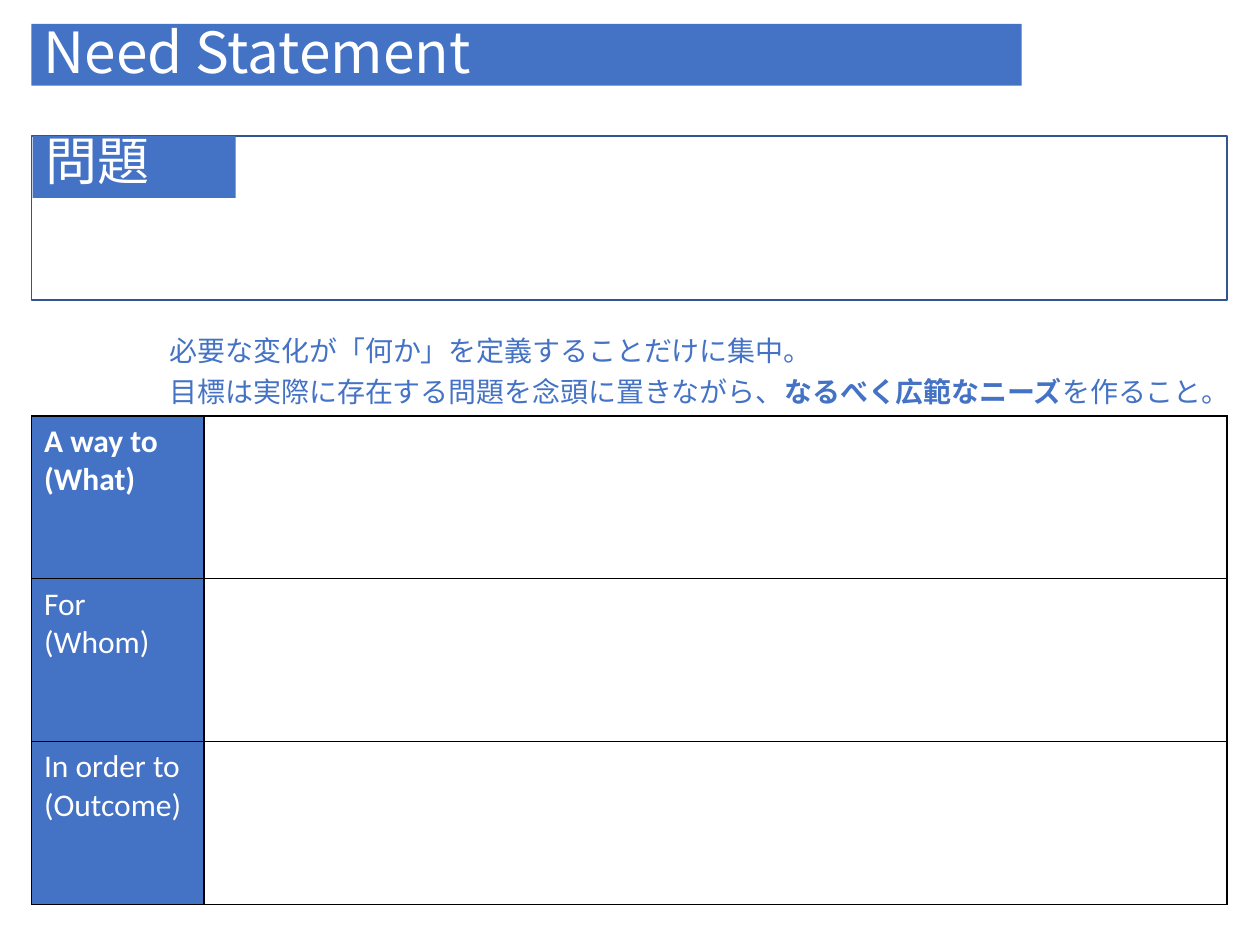
from lxml import etree
from pptx import Presentation
from pptx.dml.color import RGBColor
from pptx.enum.shapes import MSO_SHAPE
from pptx.enum.text import MSO_ANCHOR, PP_ALIGN
from pptx.oxml.ns import qn
from pptx.util import Inches, Pt

RECTANGLE = MSO_SHAPE.RECTANGLE
MIDDLE = MSO_ANCHOR.MIDDLE
LEFT = PP_ALIGN.LEFT

BLUE = RGBColor(0x44, 0x72, 0xC4)
DARK_BLUE = RGBColor(0x32, 0x54, 0x91)
WHITE = RGBColor(0xFF, 0xFF, 0xFF)
BLACK = RGBColor(0x00, 0x00, 0x00)

HEADING_FONT = "Noto Sans CJK JP"
BODY_FONT = "Calibri"

MARGIN = 0.25
CONTENT_WIDTH = 9.49
BAR_HEIGHT = 0.49
PROBLEM_TOP = 1.08
TABLE_TOP = 3.3
ROW_HEIGHT = 1.293
LABEL_WIDTH = 1.37
GUIDE_LEFT = 1.25


def add_run(paragraph, text, size, font, color, bold=False):
    run = paragraph.add_run()
    run.text = text
    run.font.size = Pt(size)
    run.font.name = font
    run.font.bold = bold
    run.font.color.rgb = color
    # The Japanese glyphs take their font from the East Asian slot.
    east_asian = etree.SubElement(run.font._element, qn("a:ea"))
    east_asian.set("typeface", HEADING_FONT)


def add_border(cell):
    properties = cell._tc.get_or_add_tcPr()
    for position, side in enumerate(("a:lnL", "a:lnR", "a:lnT", "a:lnB")):
        line = etree.Element(qn(side), w=str(Pt(1)))
        fill = etree.SubElement(line, qn("a:solidFill"))
        etree.SubElement(fill, qn("a:srgbClr"), val=str(BLACK))
        properties.insert(position, line)


presentation = Presentation()
presentation.slide_width = Inches(10)
presentation.slide_height = Inches(7.5)
slide = presentation.slides.add_slide(presentation.slide_layouts[6])

# Frame for the problem
frame = slide.shapes.add_shape(
    RECTANGLE, Inches(MARGIN), Inches(PROBLEM_TOP), Inches(CONTENT_WIDTH), Inches(1.3))
frame.shadow.inherit = False
frame.fill.background()
frame.line.color.rgb = DARK_BLUE
frame.line.width = Pt(1)

# Heading bars: text, left, top, width, text size, line spacing
bars = [
    ("Need Statement", MARGIN, 0.19, 7.86, 32.4, 0.9),
    ("問題", 0.26, PROBLEM_TOP, 1.61, 29.7, 0.7),
]
for text, left, top, width, size, spacing in bars:
    bar = slide.shapes.add_shape(
        RECTANGLE, Inches(left), Inches(top), Inches(width), Inches(BAR_HEIGHT))
    bar.shadow.inherit = False
    bar.fill.solid()
    bar.fill.fore_color.rgb = BLUE
    bar.line.fill.background()
    bar.text_frame.word_wrap = True
    bar.text_frame.vertical_anchor = MIDDLE
    paragraph = bar.text_frame.paragraphs[0]
    paragraph.alignment = LEFT
    paragraph.line_spacing = spacing
    add_run(paragraph, text, size, HEADING_FONT, WHITE)

# Need table: a label column and an empty column to fill in
labels = [("A way to", "(What)"), ("For", "(Whom)"), ("In order to", "(Outcome)")]
table = slide.shapes.add_table(
    len(labels), 2, Inches(MARGIN), Inches(TABLE_TOP),
    Inches(CONTENT_WIDTH), Inches(ROW_HEIGHT * len(labels))).table
table.first_row = False
table.horz_banding = False
table.columns[0].width = Inches(LABEL_WIDTH)
table.columns[1].width = Inches(CONTENT_WIDTH - LABEL_WIDTH)
for index, lines in enumerate(labels):
    label, answer = table.cell(index, 0), table.cell(index, 1)
    label.fill.solid()
    label.fill.fore_color.rgb = BLUE
    answer.fill.background()
    add_border(label)
    add_border(answer)
    label_frame = label.text_frame
    label_frame.add_paragraph()
    for paragraph, line in zip(label_frame.paragraphs, lines):
        add_run(paragraph, line, 18, BODY_FONT, WHITE, bold=index == 0)

# Guidance above the table: top, width, height, runs with their weight
guidance = [
    (2.6, 5.55, 0.37, [("必要な変化が「何か」を定義することだけに集中。", False)]),
    (2.92, 8.73, 0.64, [
        ("目標は実際に存在する問題を念頭に置きながら、", False),
        ("なるべく広範なニーズ", True),
        ("を作ること。", False),
    ]),
]
for top, width, height, runs in guidance:
    box = slide.shapes.add_textbox(
        Inches(GUIDE_LEFT), Inches(top), Inches(width), Inches(height))
    box.text_frame.word_wrap = True
    for text, bold in runs:
        add_run(box.text_frame.paragraphs[0], text, 16, BODY_FONT, BLUE, bold)

presentation.save("out.pptx")
